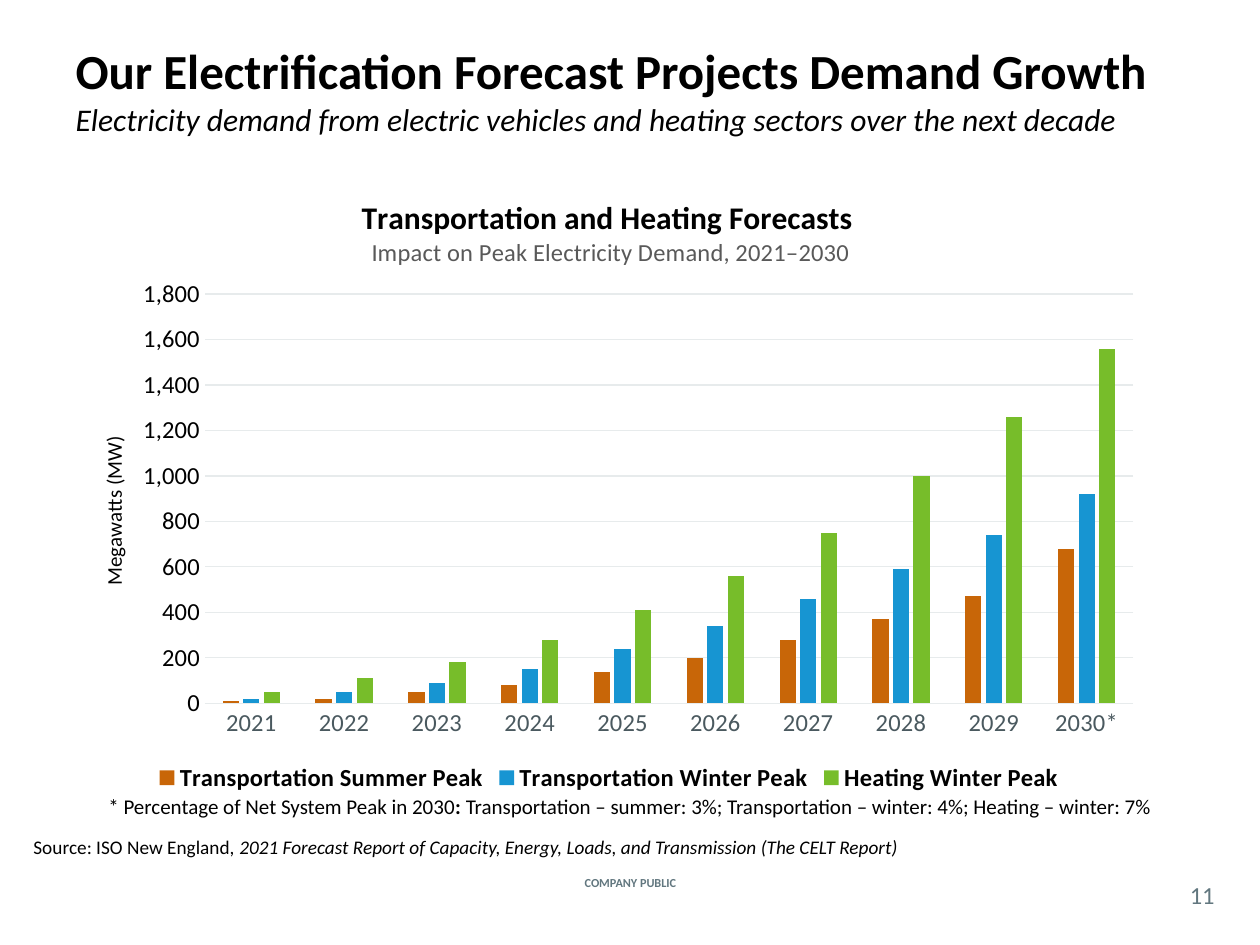
from lxml import etree
from pptx import Presentation
from pptx.chart.data import CategoryChartData
from pptx.dml.color import RGBColor
from pptx.enum.chart import XL_CHART_TYPE, XL_LEGEND_POSITION, XL_TICK_MARK
from pptx.enum.text import MSO_ANCHOR, PP_ALIGN
from pptx.oxml.ns import qn
from pptx.util import Pt

LEFT, CENTER = PP_ALIGN.LEFT, PP_ALIGN.CENTER
TOP, MIDDLE = MSO_ANCHOR.TOP, MSO_ANCHOR.MIDDLE
NO_TICK = XL_TICK_MARK.NONE
FONT = "Calibri"
BLACK, SLATE, DARK_SLATE, GRAY, GRID = "000000", "62777F", "4A595F", "595959", "E7EBEC"

# Content: each span is (text, size, colour, style), style holding "b" and/or "i"
TITLE = [
    ("Our Electrification Forecast Projects Demand Growth ", 28, BLACK, "b"),
    ("Electricity demand from electric vehicles and heating sectors over the next decade",
     18, BLACK, "i"),
]
# (left, top, width, height), alignment, anchor, inset, spans
TEXTS = [
    ((307.5, 498, 105.5, 12.5), CENTER, MIDDLE, 0, [("COMPANY PUBLIC", 7, SLATE, "b")]),
    ((672, 501, 30, 21), CENTER, MIDDLE, 0, [("11", 14, SLATE, "")]),
    ((36, 450, 648, 21.8), CENTER, TOP, 3.6, [
        ("* Percentage of Net System Peak in 2030", 12, BLACK, ""),
        (": ", 12, BLACK, "b"),
        ("Transportation – summer: 3%; Transportation – winter: 4%; Heating – winter: 7%",
         12, BLACK, "")]),
    ((12, 474, 696, 20.6), LEFT, TOP, 3.6, [
        ("Source: ISO New England, ", 11, BLACK, ""),
        ("2021 Forecast Report of Capacity, Energy, Loads, and Transmission (The CELT Report)",
         11, BLACK, "i")]),
]
CHART_TITLE = [
    [("Transportation and Heating Forecasts ", 18, BLACK, "b")],
    [("Impact on Peak Electricity Demand, 2021‒2030", 14, GRAY, "")],
]
AXIS_TITLE = [("Megawatts (MW)", 12, BLACK, "")]
YEARS = [str(year) for year in range(2021, 2030)] + ["2030*"]
SERIES = [
    ("Transportation Summer Peak", "C86608", [10, 20, 50, 80, 140, 200, 280, 370, 470, 680]),
    ("Transportation Winter Peak", "1795D2", [20, 50, 90, 150, 240, 340, 460, 590, 740, 920]),
    ("Heating Winter Peak", "77BD2A", [50, 110, 180, 280, 410, 560, 750, 1000, 1260, 1560]),
]


def color(hex_code):
    return RGBColor.from_string(hex_code)


def style_font(font, size, hex_code, style=""):
    font.name, font.size = FONT, Pt(size)
    font.bold, font.italic = "b" in style, "i" in style
    font.color.rgb = color(hex_code)


def write(paragraph, spans):
    for text, *look in spans:
        span = paragraph.add_run()
        span.text = text
        style_font(span.font, *look)


def place(element, **fractions):
    """Fix a chart part at fractions of the chart's size."""
    layout = element.find(qn("c:layout"))
    if layout is None:
        layout = etree.Element(qn("c:layout"))
        text = element.find(qn("c:tx"))
        element.insert(0 if text is None else 1, layout)
    manual = etree.SubElement(layout, qn("c:manualLayout"))
    if "w" in fractions:
        etree.SubElement(manual, qn("c:layoutTarget")).set("val", "inner")
    for key in ("x", "y"):
        etree.SubElement(manual, qn(f"c:{key}Mode")).set("val", "edge")
    for key, value in fractions.items():
        etree.SubElement(manual, qn(f"c:{key}")).set("val", str(value))


deck = Presentation()
deck.slide_width, deck.slide_height = Pt(720), Pt(540)
page = deck.slides.add_slide(deck.slide_layouts[5])

# Title
title = page.shapes.title
title.left, title.top, title.width, title.height = Pt(36), Pt(6), Pt(648), Pt(90)
title.text_frame.word_wrap = True
title.text_frame.vertical_anchor = MIDDLE
title.text_frame.paragraphs[0].alignment = LEFT
write(title.text_frame.paragraphs[0], TITLE)

# Chart
data = CategoryChartData(number_format="#,##0")
data.categories = YEARS
for name, _, values in SERIES:
    data.add_series(name, values)
chart = page.shapes.add_chart(XL_CHART_TYPE.COLUMN_CLUSTERED,
                              Pt(36), Pt(96), Pt(624), Pt(360), data).chart
style_font(chart.font, 10, SLATE)
plot = chart.plots[0]
plot.gap_width, plot.overlap, plot.vary_by_categories = 219, -27, False
for series, (_, fill, _) in zip(plot.series, SERIES):
    series.format.fill.solid()
    series.format.fill.fore_color.rgb = color(fill)

chart.has_title = True
heading = chart.chart_title.text_frame
write(heading.paragraphs[0], CHART_TITLE[0])
write(heading.add_paragraph(), CHART_TITLE[1])

# Axes and legend
years, megawatts = chart.category_axis, chart.value_axis
for axis, hex_code in ((years, DARK_SLATE), (megawatts, BLACK)):
    axis.major_tick_mark = axis.minor_tick_mark = NO_TICK
    style_font(axis.tick_labels.font, 14, hex_code)
megawatts.minimum_scale, megawatts.maximum_scale, megawatts.major_unit = 0, 1800, 200
megawatts.tick_labels.number_format = "#,##0"
megawatts.tick_labels.number_format_is_linked = False
megawatts.format.line.fill.background()
for line in (years.format.line, megawatts.major_gridlines.format.line):
    line.color.rgb, line.width = color(GRID), Pt(0.75)
write(megawatts.axis_title.text_frame.paragraphs[0], AXIS_TITLE)

chart.has_legend = True
chart.legend.position = XL_LEGEND_POSITION.BOTTOM
chart.legend.include_in_layout = False
style_font(chart.legend.font, 14, BLACK, "b")

plot_area = chart.element.find(f".//{qn('c:plotArea')}")
place(plot_area, x=0.13, y=0.2, w=0.85, h=0.65)
place(chart.element.find(f".//{qn('c:chart')}/{qn('c:title')}"), x=0.27, y=0.04)
place(plot_area.find(f".//{qn('c:title')}"), x=0.03, y=0.42)

# Footnote, source, footer and page number
for bounds, alignment, anchor, inset, spans in TEXTS:
    box = page.shapes.add_textbox(*map(Pt, bounds))
    frame = box.text_frame
    frame.word_wrap, frame.vertical_anchor = True, anchor
    frame.margin_left = frame.margin_right = Pt(inset * 2)
    frame.margin_top = frame.margin_bottom = Pt(inset)
    frame.paragraphs[0].alignment = alignment
    write(frame.paragraphs[0], spans)

deck.save("out.pptx")
